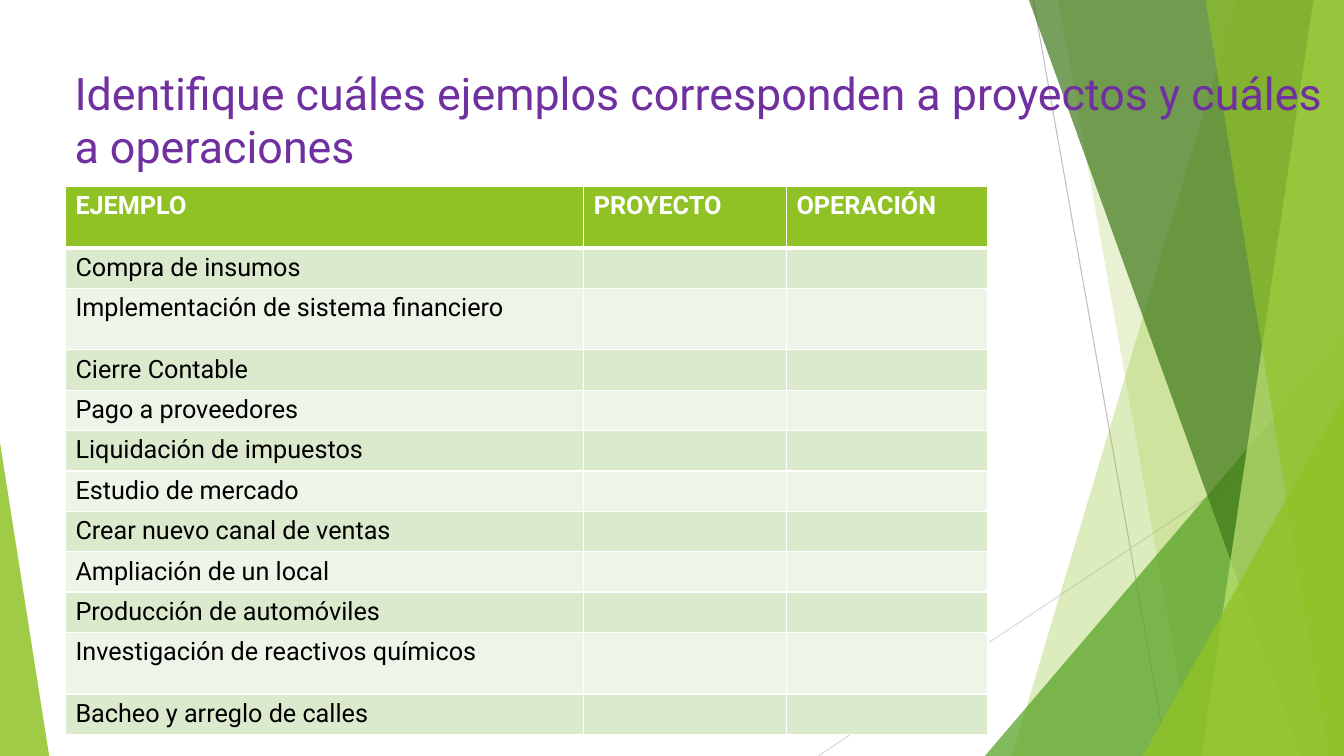
from dataclasses import dataclass
from typing import Union

from lxml import etree
from pptx import Presentation
from pptx import util as u
from pptx.dml.color import RGBColor
from pptx.enum import shapes, text
from pptx.oxml.ns import qn

W, H = 33.87, 19.05
FONT = "Roboto"
COLORS = {
    "white": "FFFFFF", "black": "000000", "purple": "7030A0",
    "lime": "90C226", "green": "54A021", "forest": "3F7819", "pale": "C0E474",
    "band": "DBE9CD", "light_band": "EEF4E8",
    "gray": "BFBFBF", "light_gray": "D9D9D9",
}


@dataclass
class Line:
    x1: float
    y1: float
    x2: float
    y2: float
    color: str


@dataclass
class Ribbon:
    top_left: float
    bottom_left: float
    color: str
    alpha: int


@dataclass
class Triangle:
    x: float
    y: float
    w: float
    h: float
    apex: float
    color: str
    alpha: int


@dataclass
class Row:
    label: str
    height: float = 1.0


LINES = [
    Line(26.04, 0, 29.41, H, "gray"),
    Line(W, 10.24, 20.62, H, "light_gray"),
]
FACETS = [
    Ribbon(31.19, 25.5, "lime", 30),
    Ribbon(26.67, 30.05, "lime", 20),
    Triangle(24.82, 8.46, 9.05, 10.59, 1, "green", 72),
    Ribbon(25.93, 32.79, "forest", 70),
    Ribbon(33.1, 30.28, "pale", 70),
    Ribbon(30.38, 33.48, "lime", 65),
    Triangle(28.8, 9.98, 5.07, 9.07, 1, "lime", 80),
    Triangle(0, 11.15, 1.24, 7.9, 0, "lime", 85),
]
HEADERS = ["EJEMPLO", "PROYECTO", "OPERACIÓN"]
COL_WIDTHS = [13.06, 5.11, 5.08]
HEADER_HEIGHT = 1.55
ROWS = [
    Row("Compra de insumos"),
    Row("Implementación de sistema financiero", 1.55),
    Row("Cierre Contable"),
    Row("Pago a proveedores"),
    Row("Liquidación de impuestos"),
    Row("Estudio de mercado"),
    Row("Crear nuevo canal de ventas"),
    Row("Ampliación de un local"),
    Row("Producción de automóviles"),
    Row("Investigación de reactivos químicos", 1.55),
    Row("Bacheo y arreglo de calles"),
]


def rgb(name: str) -> RGBColor:
    return RGBColor.from_string(COLORS[name])


def write(tf, content: str, *, size: float = 18, color: str = "black", bold: bool = False) -> None:
    p = tf.paragraphs[0]
    if not content:
        end = etree.SubElement(p._p, qn("a:endParaRPr"), sz=str(size * 100))
        etree.SubElement(end, qn("a:latin"), typeface=FONT)
        return
    r = p.add_run()
    r.text = content
    r.font.name = FONT
    r.font.size = u.Pt(size)
    r.font.bold = bold
    r.font.color.rgb = rgb(color)


def draw_line(s, line: Line) -> None:
    c = s.shapes.add_connector(
        shapes.MSO_CONNECTOR.STRAIGHT,
        u.Cm(line.x1), u.Cm(line.y1), u.Cm(line.x2), u.Cm(line.y2))
    c.line.color.rgb = rgb(line.color)
    c.line.width = u.Pt(0.75)
    etree.SubElement(c._element.spPr, qn("a:effectLst"))


def draw_facet(s, facet: Union[Ribbon, Triangle]) -> None:
    if isinstance(facet, Ribbon):
        fb = s.shapes.build_freeform(u.Cm(facet.top_left), 0)
        corners = [(W, 0), (W, H), (facet.bottom_left, H)]
        fb.add_line_segments([(u.Cm(x), u.Cm(y)) for x, y in corners], close=True)
        sp = fb.convert_to_shape()
    else:
        sp = s.shapes.add_shape(
            shapes.MSO_SHAPE.ISOSCELES_TRIANGLE,
            u.Cm(facet.x), u.Cm(facet.y), u.Cm(facet.w), u.Cm(facet.h))
        sp.adjustments[0] = facet.apex
    sp.shadow.inherit = False
    sp.line.fill.background()
    sp.fill.solid()
    sp.fill.fore_color.rgb = rgb(facet.color)
    color = sp._element.spPr.find(qn("a:solidFill"))[0]
    etree.SubElement(color, qn("a:alpha"), val=str(facet.alpha * 1000))


def style_cell(cell, fill: str, top: float = 1, bottom: float = 1) -> None:
    tc_pr = cell._tc.get_or_add_tcPr()
    for side, width in {"L": 1, "R": 1, "T": top, "B": bottom}.items():
        ln = etree.SubElement(tc_pr, qn(f"a:ln{side}"), w=str(u.Pt(width)))
        solid = etree.SubElement(ln, qn("a:solidFill"))
        etree.SubElement(solid, qn("a:srgbClr"), val=COLORS["white"])
    cell.fill.solid()
    cell.fill.fore_color.rgb = rgb(fill)


def draw_table(s) -> None:
    heights = [HEADER_HEIGHT] + [row.height for row in ROWS]
    table = s.shapes.add_table(
        len(heights), len(HEADERS), u.Cm(1.65), u.Cm(4.7),
        u.Cm(sum(COL_WIDTHS)), u.Cm(sum(heights))).table
    for col, width in zip(table.columns, COL_WIDTHS):
        col.width = u.Cm(width)
    for row, height in zip(table.rows, heights):
        row.height = u.Cm(height)
    for j, header in enumerate(HEADERS):
        cell = table.cell(0, j)
        style_cell(cell, "lime", bottom=3)
        write(cell.text_frame, header, color="white", bold=True)
        for i, row in enumerate(ROWS, 1):
            cell = table.cell(i, j)
            style_cell(cell, "band" if i % 2 else "light_band", top=3 if i == 1 else 1)
            write(cell.text_frame, row.label if j == 0 else "")


def main() -> None:
    prs = Presentation()
    prs.slide_width, prs.slide_height = u.Cm(W), u.Cm(H)
    s = prs.slides.add_slide(prs.slide_layouts[6])
    for line in LINES:
        draw_line(s, line)
    for facet in FACETS:
        draw_facet(s, facet)
    title = s.shapes.add_textbox(u.Cm(1.63), u.Cm(1.52), u.Cm(32.24), u.Cm(1.27))
    tf = title.text_frame
    tf.word_wrap = True
    tf.vertical_anchor = text.MSO_ANCHOR.TOP
    write(tf, "Identifique cuáles ejemplos corresponden a proyectos y cuáles a operaciones",
          size=32, color="purple")
    draw_table(s)
    prs.save("out.pptx")


if __name__ == "__main__":
    main()
